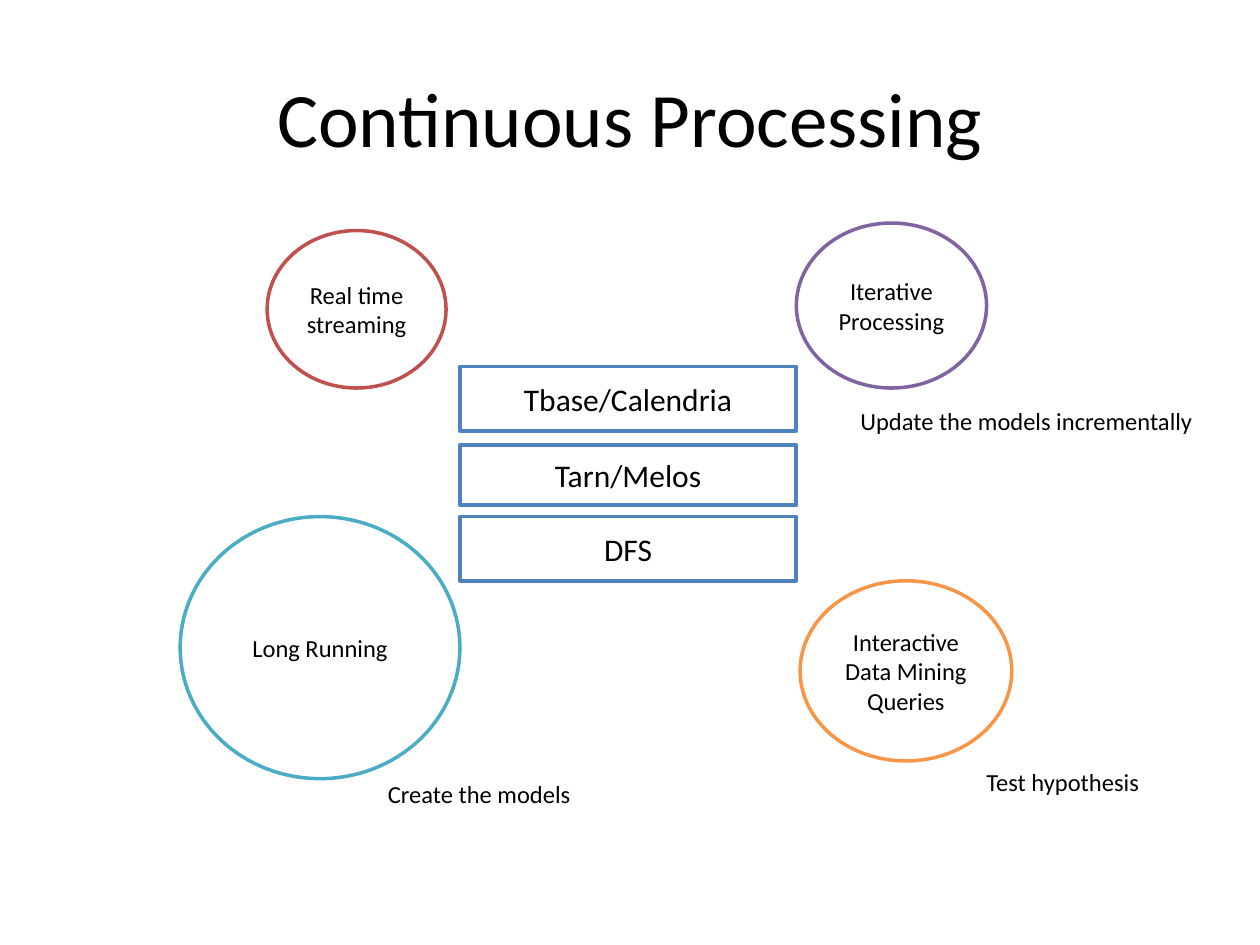
import pptx
import pptx.dml.color
import pptx.enum.shapes
import pptx.enum.text
import pptx.util

Inches = pptx.util.Inches
RGBColor = pptx.dml.color.RGBColor
ShapeType = pptx.enum.shapes.MSO_SHAPE
Align = pptx.enum.text.PP_ALIGN
Anchor = pptx.enum.text.MSO_ANCHOR

BLACK = RGBColor(0x00, 0x00, 0x00)
WHITE = RGBColor(0xFF, 0xFF, 0xFF)
BLUE = RGBColor(0x4F, 0x81, 0xBD)
RED = RGBColor(0xC0, 0x50, 0x4D)
PURPLE = RGBColor(0x80, 0x64, 0xA2)
TEAL = RGBColor(0x4B, 0xAC, 0xC6)
ORANGE = RGBColor(0xF7, 0x96, 0x46)

TITLE = "Continuous Processing"
WORKLOADS = [
    ("Long Running", TEAL, (1.43, 4.1, 2.22, 2.08)),
    ("Real time streaming", RED, (2.12, 1.83, 1.42, 1.25)),
    ("Iterative Processing", PURPLE, (6.32, 1.77, 1.51, 1.31)),
    ("Interactive Data Mining Queries", ORANGE, (6.35, 4.61, 1.68, 1.43)),
]
STACK_LEFT, STACK_WIDTH = 3.65, 2.67
STACK_LAYERS = [
    ("DFS", 4.1, 0.51),
    ("Tarn/Melos", 3.53, 0.48),
    ("Tbase/Calendria", 2.91, 0.51),
]
NOTE_HEIGHT = 0.34
NOTES = [
    ("Test hypothesis", 7.73, 6.04, 1.43),
    ("Update the models incrementally", 6.73, 3.17, 2.86),
    ("Create the models", 2.98, 6.13, 1.67),
]


def write_text(shape, text, size=14, align=Align.CENTER, anchor=Anchor.MIDDLE, wrap=True):
    frame = shape.text_frame
    frame.word_wrap = wrap
    frame.vertical_anchor = anchor
    paragraph = frame.paragraphs[0]
    paragraph.alignment = align
    run = paragraph.add_run()
    run.text = text
    run.font.name = "Calibri"
    run.font.size = pptx.util.Pt(size)
    run.font.color.rgb = BLACK


def add_outlined_shape(slide, shape_type, box, text, color, size):
    shape = slide.shapes.add_shape(shape_type, *map(Inches, box))
    shape.shadow.inherit = False
    shape.fill.solid()
    shape.fill.fore_color.rgb = WHITE
    shape.line.color.rgb = color
    shape.line.width = pptx.util.Pt(2)
    write_text(shape, text, size=size)


def main():
    presentation = pptx.Presentation()
    presentation.slide_width = Inches(10)
    presentation.slide_height = Inches(7.5)
    slide = presentation.slides.add_slide(presentation.slide_layouts[5])

    title = slide.shapes.title
    title.left, title.top, title.width, title.height = map(Inches, (0.5, 0.3, 9, 1.25))
    write_text(title, TITLE, size=44)

    for text, color, box in WORKLOADS:
        add_outlined_shape(slide, ShapeType.OVAL, box, text, color, 14)

    for text, top, height in STACK_LAYERS:
        box = (STACK_LEFT, top, STACK_WIDTH, height)
        add_outlined_shape(slide, ShapeType.RECTANGLE, box, text, BLUE, 18)

    for text, left, top, width in NOTES:
        note = slide.shapes.add_textbox(*map(Inches, (left, top, width, NOTE_HEIGHT)))
        write_text(note, text, align=Align.LEFT, anchor=Anchor.TOP, wrap=False)
        note.text_frame.auto_size = pptx.enum.text.MSO_AUTO_SIZE.SHAPE_TO_FIT_TEXT

    presentation.save("out.pptx")


if __name__ == "__main__":
    main()
